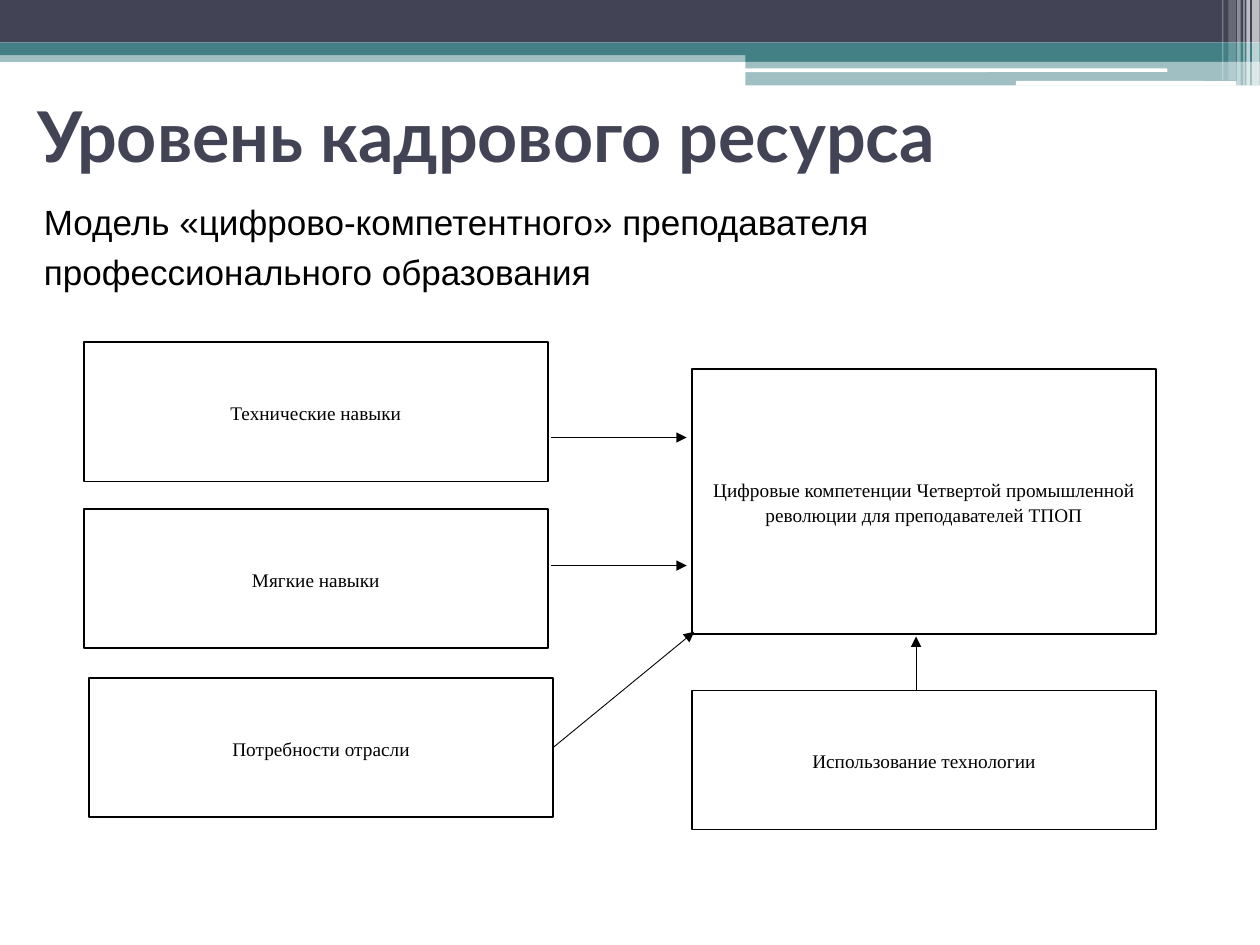
from lxml.etree import SubElement
from pptx import Presentation
from pptx.dml.color import RGBColor
from pptx.enum.shapes import MSO_CONNECTOR, MSO_SHAPE
from pptx.enum.text import MSO_ANCHOR, PP_ALIGN
from pptx.oxml.ns import qn
from pptx.util import Pt

HUES = {"dark": "424456", "teal": "438086", "white": "FFFFFF", "black": "000000"}


class Deck:
    def __init__(self, slide):
        self.slide = slide

    def hue(self, name):
        return RGBColor.from_string(HUES[name])

    def shape(self, left, top, width, height, fill, alpha=100, kind=MSO_SHAPE.RECTANGLE):
        item = self.slide.shapes.add_shape(kind, Pt(left), Pt(top), Pt(width), Pt(height))
        item.shadow.inherit = False
        item.fill.solid()
        item.fill.fore_color.rgb = self.hue(fill)
        item.line.fill.background()
        if alpha < 100:
            color = item._element.spPr.find(".//" + qn("a:srgbClr"))
            SubElement(color, qn("a:alpha")).set("val", str(alpha * 1000))
        return item

    def add_run(self, frame, text, size, font, hue="black", bold=False):
        frame.word_wrap = True
        para = frame.paragraphs[0]
        run = para.add_run()
        run.text = text
        run.font.size = Pt(size)
        run.font.name = font
        run.font.bold = bold
        run.font.color.rgb = self.hue(hue)
        return para

    def label(self, left, top, width, height, text, size, font, hue="black", bold=False):
        item = self.slide.shapes.add_textbox(Pt(left), Pt(top), Pt(width), Pt(height))
        return item.text_frame, self.add_run(item.text_frame, text, size, font, hue, bold)

    def box(self, left, top, height, text):
        item = self.shape(left, top, 265, height, "white")
        item.line.color.rgb = self.hue("black")
        item.line.width = Pt(1)
        item.text_frame.vertical_anchor = MSO_ANCHOR.MIDDLE
        para = self.add_run(item.text_frame, text, 11, "Times New Roman")
        para.alignment = PP_ALIGN.CENTER
        para.line_spacing = 1.07
        para.space_after = Pt(8)
        return item

    def arrow(self, left, top, right, base):
        item = self.slide.shapes.add_connector(
            MSO_CONNECTOR.STRAIGHT, Pt(left), Pt(top), Pt(right), Pt(base))
        item.line.color.rgb = self.hue("black")
        item.line.width = Pt(0.5)
        props = item._element.spPr
        SubElement(props.find(qn("a:ln")), qn("a:tailEnd")).set("type", "triangle")
        SubElement(props, qn("a:effectLst"))
        return item


def main():
    show = Presentation()
    show.slide_width, show.slide_height = Pt(720), Pt(540)
    deck = Deck(show.slides.add_slide(show.slide_layouts[6]))

    for left, top, width, height, fill, alpha in [
        (0, 28.8, 720, 6.6, "teal", 50),
        (0, 0, 720, 24.3, "dark", 100),
        (0, 24.3, 720, 7.2, "teal", 100),
        (426, 28.3, 294, 7, "teal", 100),
        (426, 34.6, 294, 14.2, "teal", 50),
    ]:
        deck.shape(left, top, width, height, fill, alpha)
    for left, top, width, height in [(425.7, 39.1, 241.3, 2.1), (580.5, 46.3, 126, 2.7)]:
        deck.shape(left, top, width, height, "white", kind=MSO_SHAPE.ROUNDED_RECTANGLE)
    for left, width, height, alpha in [
        (715.5, 4.3, 48.8, 65),
        (712.2, 2, 48.8, 65),
        (710.5, 0.7, 48.8, 60),
        (707, 2, 48.8, 40),
        (702, 4.3, 46, 20),
        (698.4, 0.7, 46, 30),
    ]:
        deck.shape(left, 0, width, height, "white", alpha)

    frame, _ = deck.label(14.2, 43.2, 690, 67.7, "Уровень кадрового ресурса",
                          40, "Lato", "dark", True)
    frame.vertical_anchor = MSO_ANCHOR.MIDDLE
    _, para = deck.label(
        18, 106, 660, 408,
        "Модель «цифрово-компетентного» преподавателя профессионального образования",
        20, "Arial")
    para.line_spacing = 1.2
    para.space_before = Pt(3)

    deck.box(48, 195.6, 79.5, "Технические навыки")
    deck.box(48, 291, 79.5, "Мягкие навыки")
    need = deck.box(51, 387.5, 79.5, "Потребности отрасли")
    deck.box(395.5, 211, 151.3,
             "Цифровые компетенции Четвертой промышленной революции для преподавателей ТПОП")
    deck.box(395.5, 394.5, 79.5, "Использование технологии")

    deck.arrow(523.5, 394.5, 523.5, 363.7)
    deck.arrow(316, 427.25, 396.7, 361).begin_connect(need, 3)
    for top in (323.2, 250):
        deck.arrow(314.8, top, 392.4, top)

    show.save("out.pptx")


if __name__ == "__main__":
    main()
